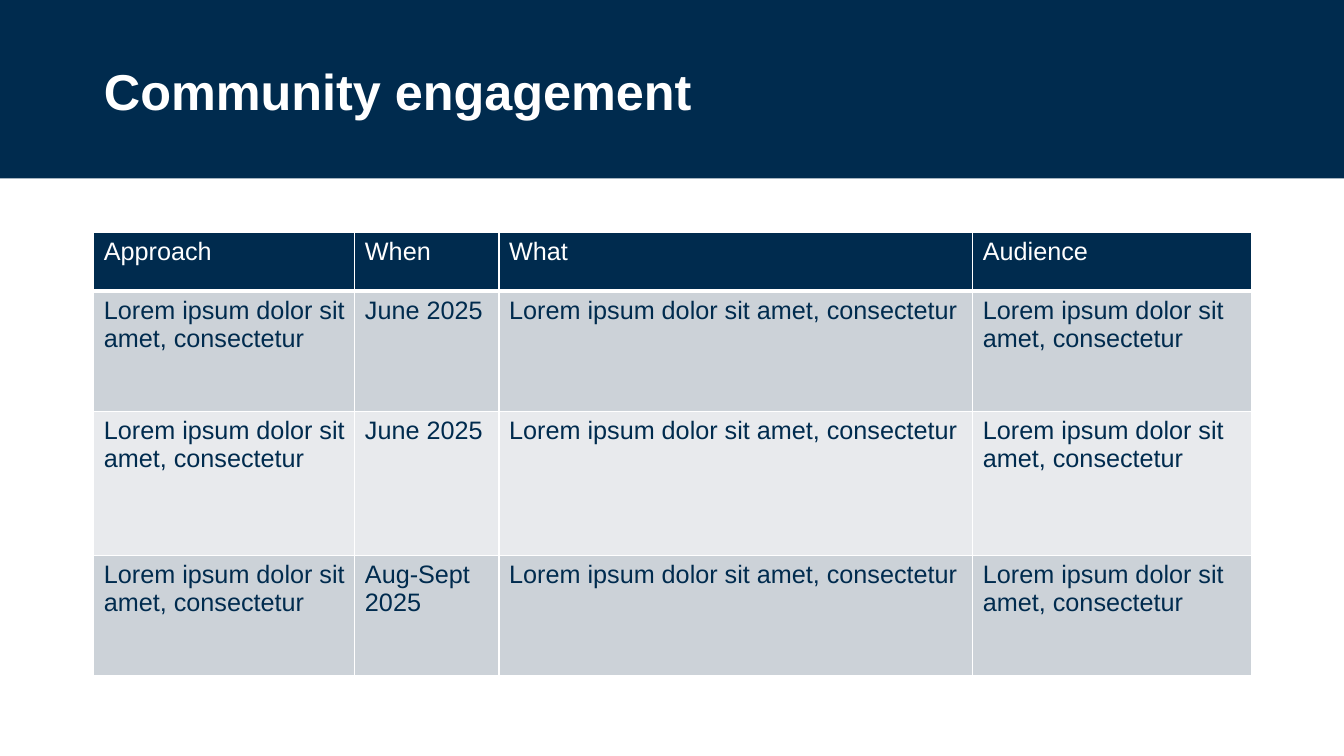
from lxml.etree import SubElement
from pptx import Presentation
from pptx.dml.color import RGBColor
from pptx.enum.shapes import MSO_SHAPE
from pptx.enum.text import MSO_ANCHOR, MSO_AUTO_SIZE, PP_ALIGN
from pptx.oxml.ns import qn
from pptx.util import Pt

COLORS = {"navy": "002B4E", "white": "FFFFFF", "band": "CCD2D8", "light": "E8EAED"}
LOREM = "Lorem ipsum dolor sit amet, consectetur"
DATES = ["June 2025", "June 2025", "Aug-Sept 2025"]
ROWS = [["Approach", "When", "What", "Audience"]]
ROWS += [[LOREM, date, LOREM, LOREM] for date in DATES]
COL_WIDTHS = [186.5, 103, 338.4, 199.4]
ROW_HEIGHTS = [41.8, 85.7, 103, 85.7]


def rgb(name):
    return RGBColor.from_string(COLORS[name])


class SlideBuilder:
    def __init__(self, prs, font="Arial"):
        self.font = font
        self.s = prs.slides.add_slide(prs.slide_layouts[5])

    def format_text(self, tf, size, color, bold=False):
        for p in tf.paragraphs:
            p.alignment = PP_ALIGN.LEFT
            for r in p.runs:
                r.font.name = self.font
                r.font.size = Pt(size)
                r.font.bold = bold
                r.font.color.rgb = rgb(color)

    def title(self, text, x, y, w, h):
        sp = self.s.shapes.title
        sp.left, sp.top, sp.width, sp.height = Pt(x), Pt(y), Pt(w), Pt(h)
        tf = sp.text_frame
        tf.text = text
        tf.word_wrap = True
        tf.auto_size = MSO_AUTO_SIZE.SHAPE_TO_FIT_TEXT
        tf.vertical_anchor = MSO_ANCHOR.MIDDLE
        self.format_text(tf, 36, "white", bold=True)

    def banner(self, w, h, color):
        sp = self.s.shapes.add_shape(MSO_SHAPE.RECTANGLE, 0, 0, Pt(w), Pt(h))
        sp.shadow.inherit = False
        sp.fill.solid()
        sp.fill.fore_color.rgb = rgb(color)
        sp.line.fill.background()
        self.s.shapes.title.element.addprevious(sp.element)

    def borders(self, cell, bottom):
        tcPr = cell._tc.get_or_add_tcPr()
        for side, width in {"lnL": 1, "lnR": 1, "lnT": 1, "lnB": bottom}.items():
            ln = SubElement(tcPr, qn(f"a:{side}"), w=str(Pt(width)))
            fill = SubElement(ln, qn("a:solidFill"))
            SubElement(fill, qn("a:srgbClr"), val=COLORS["white"])

    def table(self, rows, x, y, widths, heights):
        frame = self.s.shapes.add_table(
            len(rows), len(widths), Pt(x), Pt(y), Pt(sum(widths)), Pt(sum(heights)))
        tbl = frame.table
        for col, width in zip(tbl.columns, widths):
            col.width = Pt(width)
        for i, (row, height) in enumerate(zip(rows, heights)):
            tbl.rows[i].height = Pt(height)
            header = i == 0
            fill = "navy" if header else "band" if i % 2 else "light"
            for j, text in enumerate(row):
                cell = tbl.cell(i, j)
                cell.text_frame.text = text
                self.format_text(cell.text_frame, 18, "white" if header else "navy")
                self.borders(cell, bottom=3 if header else 1)
                cell.fill.solid()
                cell.fill.fore_color.rgb = rgb(fill)


def main():
    prs = Presentation()
    prs.slide_width, prs.slide_height = Pt(960), Pt(540)
    slide = SlideBuilder(prs)
    slide.banner(960, 127.5, "navy")
    slide.title("Community engagement", 67, 39, 823.7, 51)
    slide.table(ROWS, 67, 166.3, COL_WIDTHS, ROW_HEIGHTS)
    prs.save("out.pptx")


if __name__ == "__main__":
    main()
